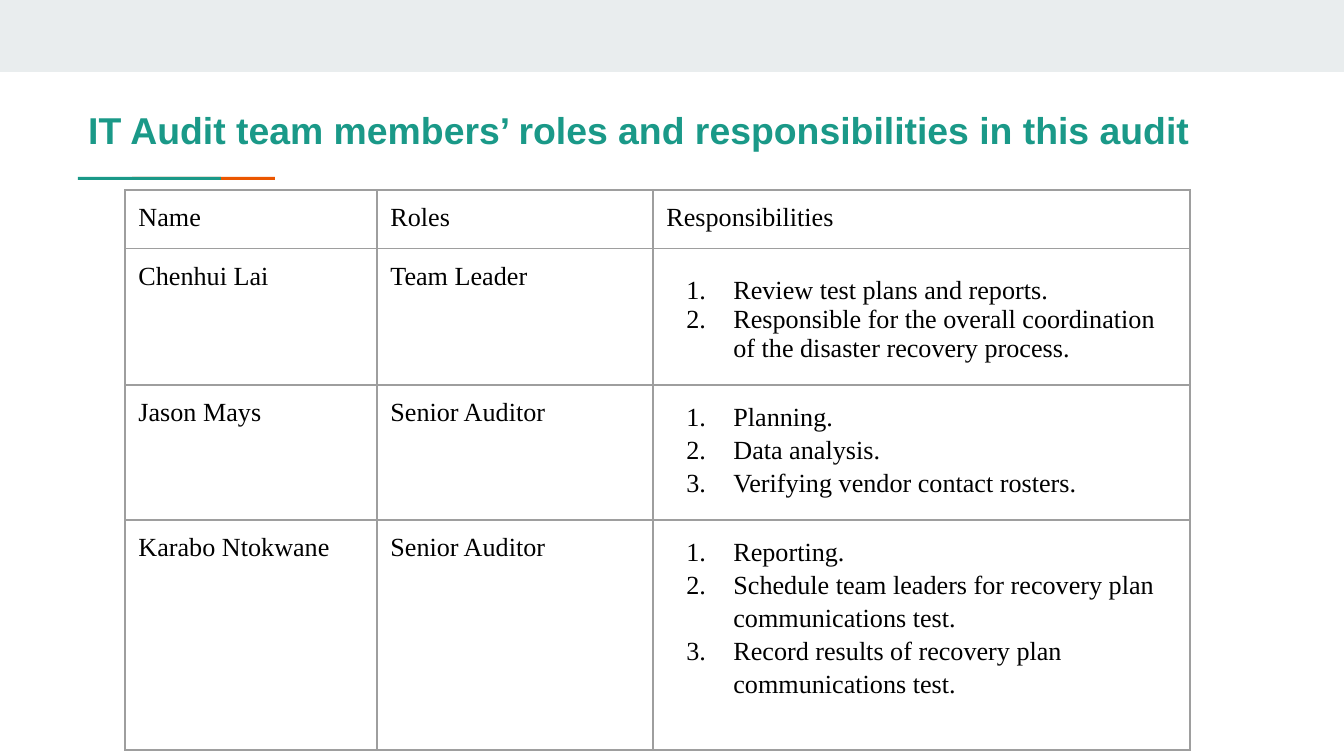
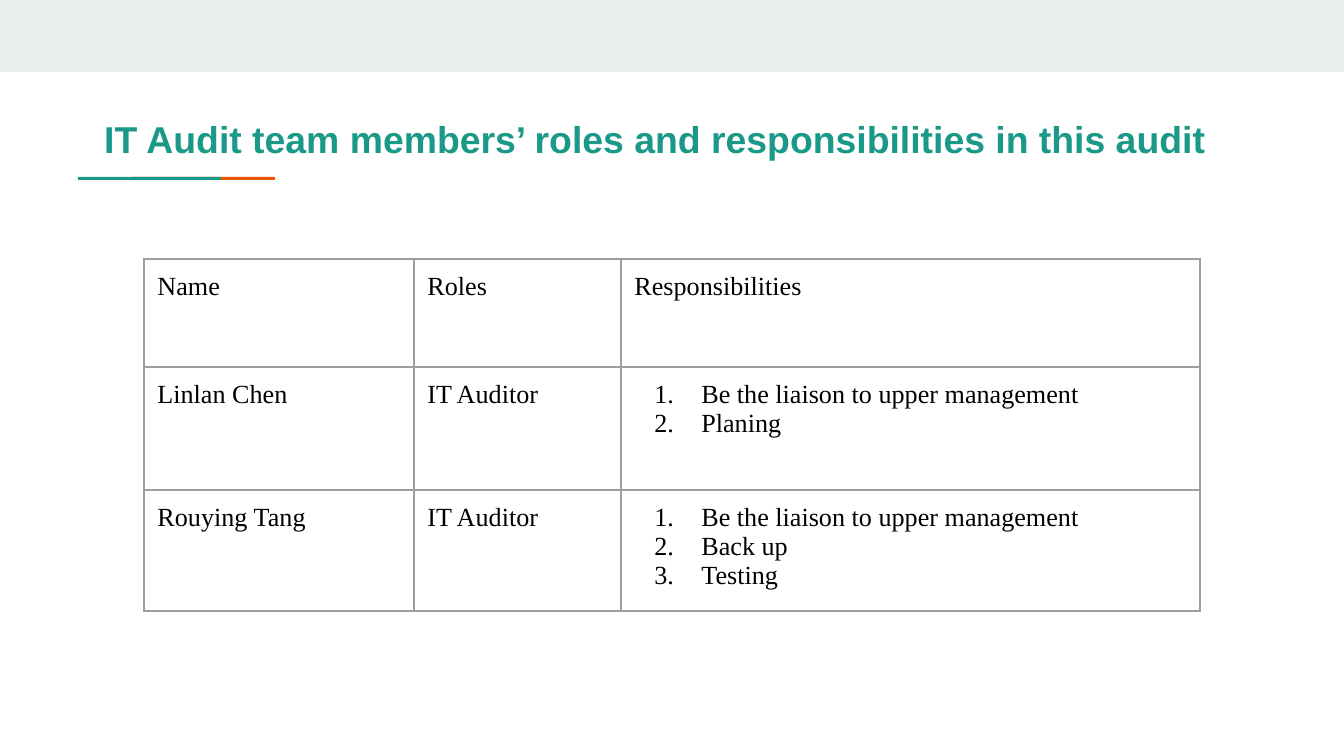
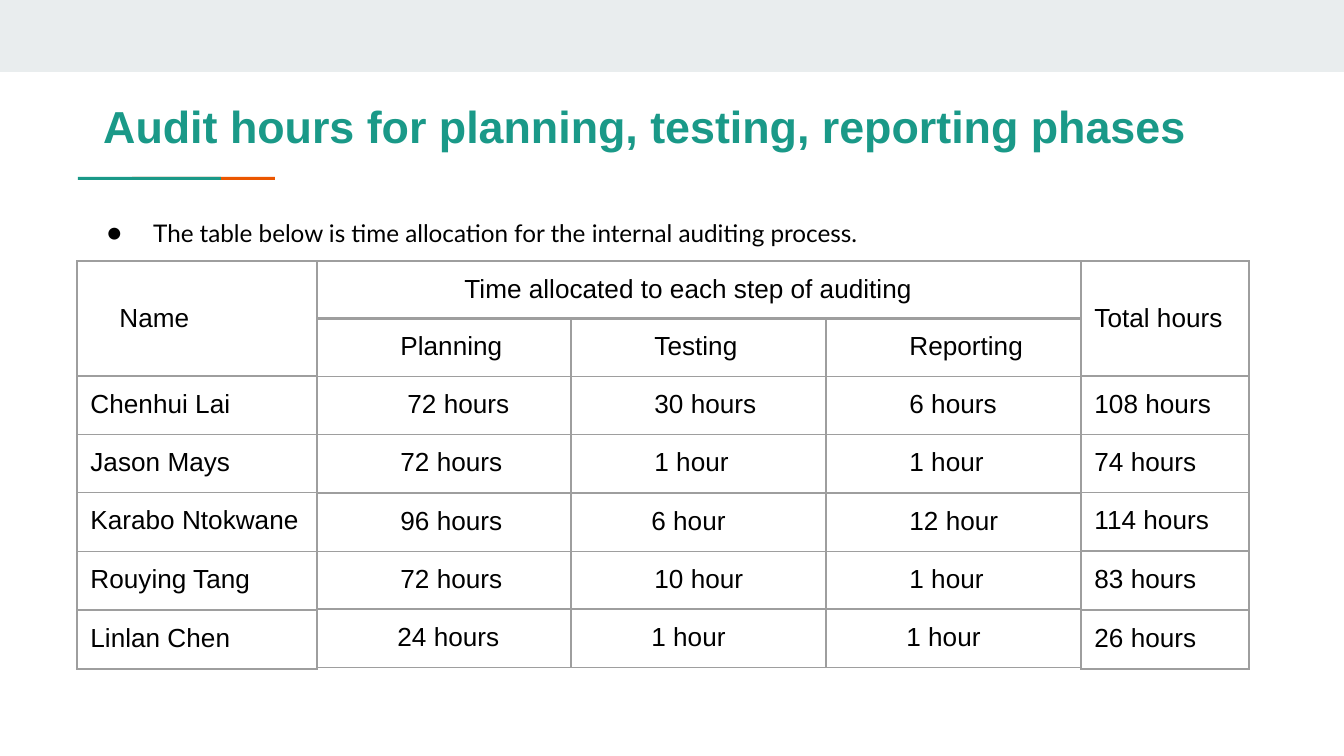
from dataclasses import dataclass

from lxml.etree import SubElement
from pptx import Presentation
from pptx.dml.color import RGBColor
from pptx.enum.shapes import MSO_SHAPE
from pptx.enum.text import MSO_ANCHOR
from pptx.oxml.ns import qn
from pptx.util import Pt

PIXEL = 914400 / 134.4
SLIDE_SIZE = (1344, 756)
MARGINS = dict.fromkeys(("margin_left", "margin_top", "margin_right", "margin_bottom"), Pt(7.2))


@dataclass(frozen=True)
class Theme:
    """Colours, fonts and type sizes of the deck."""

    teal: str = "1A9988"
    orange: str = "EB5600"
    band: str = "E9EDEE"
    border: str = "9E9E9E"
    ink: str = "000000"
    sans: str = "Arial"
    serif: str = "Times New Roman"
    body: str = "Lato"
    small_title: int = 20
    large_title: int = 24
    table_size: int = 14
    body_size: int = 13
    border_width: float = 0.75


@dataclass(frozen=True)
class Line:
    """One paragraph with its indents in px and its bullet."""

    text: str
    left: int = 0
    first: int = 0
    spacing: float = 1.0
    bullet: str = ""


def numbered(*texts, spacing=1.0):
    """Return the texts as numbered lines."""
    return [Line(text, 67, -47, spacing, "1.") for text in texts]


def inset(*texts, left=70):
    """Return a row of cells whose texts are indented."""
    return [[Line(text, left)] for text in texts]


def column(*texts):
    """Return the texts as rows of one cell."""
    return [[text] for text in texts]


THEME = Theme()
HEADINGS = ["Name", "Roles", "Responsibilities"]
TEAM_TITLE = "IT Audit team members’ roles and responsibilities in this audit"
TEAM_TITLE_FORMAT = {"line_spacing": 1.46, "space_before": Pt(13), "space_after": Pt(13)}
BARS = [
    ((0, 0, 1344, 72), THEME.band),
    ((132, 177, 143, 3), THEME.orange),
    ((78, 177, 143, 3), THEME.teal),
]
PHASE_WIDTHS = [254, 255, 255]
NAME_HEIGHTS = [115, 58, 58, 59, 58, 59]
TOTAL_HEIGHTS = [115, 58, 58, 58, 59, 59]

SLIDES = [
    {
        "title": (TEAM_TITLE, (75, 73, 1253, 84), THEME.small_title, TEAM_TITLE_FORMAT),
        "font": THEME.serif,
        "tables": [
            ((125, 190), [252, 276, 537], [56, 128, 133, 230], [
                HEADINGS,
                ["Chenhui Lai", "Team Leader",
                 numbered("Review test plans and reports.", spacing=1.5)
                 + numbered("Responsible for the overall coordination of the disaster recovery process.")],
                ["Jason Mays", "Senior Auditor",
                 numbered("Planning.", "Data analysis.", "Verifying vendor contact rosters.", spacing=1.15)],
                ["Karabo Ntokwane", "Senior Auditor",
                 numbered("Reporting.",
                          "Schedule team leaders for recovery plan communications test.",
                          "Record results of recovery plan communications test.", spacing=1.15)],
            ]),
        ],
    },
    {
        "title": (TEAM_TITLE, (91, 82, 1163, 79), THEME.small_title, TEAM_TITLE_FORMAT),
        "font": THEME.serif,
        "tables": [
            ((144, 259), [270, 207, 579], [108, 123, 114], [
                HEADINGS,
                ["Linlan Chen", "IT Auditor",
                 numbered("Be the liaison to upper management", "Planing")],
                ["Rouying Tang", "IT Auditor",
                 numbered("Be the liaison to upper management", "Back up", "Testing")],
            ]),
        ],
    },
    {
        "title": ("Audit hours for planning, testing, reporting phases",
                  (90, 85, 1130, 79), THEME.large_title, {}),
        "body": (Line("The table below is time allocation for the internal auditing process.",
                      67, -46, 1.15, "●"), (73, 200, 1253, 503)),
        "font": THEME.sans,
        "tables": [
            ((317, 318), PHASE_WIDTHS, [56, 57, 56, 56, 56], [
                inset("Planning", "Testing", "Reporting"),
                inset("72 hours", left=77) + inset("30 hours", "6 hours"),
                inset("72 hours", "1 hour", "1 hour"),
                inset("96 hours") + inset("6 hour", left=67) + inset("12 hour"),
                inset("72 hours", "10 hour", "1 hour"),
            ]),
            ((317, 261), [sum(PHASE_WIDTHS)], [57],
             [inset("Time allocated to each step of auditing", left=134)]),
            ((317, 609), PHASE_WIDTHS, [56], [inset("24 hours", "1 hour", "1 hour", left=67)]),
            ((77, 261), [240], NAME_HEIGHTS,
             [inset("Name", left=29)]
             + column("Chenhui Lai", "Jason Mays", "Karabo Ntokwane", "Rouying Tang", "Linlan Chen")),
            ((1081, 261), [168], TOTAL_HEIGHTS,
             column("Total hours", "108 hours", "74 hours", "114 hours", "83 hours", "26 hours")),
        ],
    },
]


def emu(*pixels):
    """Turn px lengths into EMU."""
    return [round(pixel * PIXEL) for pixel in pixels]


def apply(target, values):
    """Set attributes of an object from a dict."""
    for name, value in values.items():
        setattr(target, name, value)


def write_line(paragraph, line, font, size, color=THEME.ink, bold=False):
    """Write one line with its indents, bullet and font."""
    paragraph.line_spacing = line.spacing
    properties = paragraph._p.get_or_add_pPr()
    left, first = emu(line.left, line.first)
    properties.set("marL", str(left))
    properties.set("indent", str(first))
    if line.bullet:
        bullet_color = SubElement(properties, qn("a:buClr"))
        SubElement(bullet_color, qn("a:srgbClr"), val=THEME.ink)
        SubElement(properties, qn("a:buSzPts"), val=str(size * 100))
        SubElement(properties, qn("a:buFont"), typeface=font)
        if line.bullet == "1.":
            SubElement(properties, qn("a:buAutoNum"), type="arabicPeriod")
        else:
            SubElement(properties, qn("a:buChar"), char=line.bullet)
    run = paragraph.add_run()
    run.text = line.text
    apply(run.font, {"name": font, "size": Pt(size), "bold": bold})
    run.font.color.rgb = RGBColor.from_string(color)
    ending = SubElement(paragraph._p, qn("a:endParaRPr"), sz=str(size * 100))
    SubElement(ending, qn("a:latin"), typeface=font)


def add_bars(slide):
    """Add the top band and the accent line."""
    for box, color in BARS:
        shape = slide.shapes.add_shape(MSO_SHAPE.RECTANGLE, *emu(*box))
        shape.shadow.inherit = False
        shape.fill.solid()
        shape.fill.fore_color.rgb = RGBColor.from_string(color)
        shape.line.fill.background()


def add_text(slide, line, box, font, size, color=THEME.ink, bold=False):
    """Add a wrapped text box and return its paragraph."""
    frame = slide.shapes.add_textbox(*emu(*box)).text_frame
    apply(frame, {"word_wrap": True, **MARGINS})
    write_line(frame.paragraphs[0], line, font, size, color, bold)
    return frame.paragraphs[0]


def format_cell(cell, height):
    """Give a cell its borders, margins and clear fill."""
    properties = cell._tc.get_or_add_tcPr()
    for side in ("lnL", "lnR", "lnT", "lnB"):
        border = SubElement(properties, qn(f"a:{side}"), w=str(Pt(THEME.border_width)))
        fill = SubElement(border, qn("a:solidFill"))
        SubElement(fill, qn("a:srgbClr"), val=THEME.border)
    cell.fill.background()
    apply(cell, MARGINS)
    if height == NAME_HEIGHTS[0]:
        cell.vertical_anchor = MSO_ANCHOR.MIDDLE


def add_grid(slide, corner, widths, heights, rows, font):
    """Add a bordered table of text cells."""
    box = emu(*corner, sum(widths), sum(heights))
    table = slide.shapes.add_table(len(rows), len(widths), *box).table
    apply(table, {"first_row": False, "horz_banding": False})
    for table_column, width in zip(table.columns, emu(*widths)):
        table_column.width = width
    for table_row, height in zip(table.rows, emu(*heights)):
        table_row.height = height
    for row_index, row in enumerate(rows):
        for column_index, content in enumerate(row):
            cell = table.cell(row_index, column_index)
            format_cell(cell, heights[row_index])
            lines = [Line(content)] if isinstance(content, str) else content
            for index, line in enumerate(lines):
                frame = cell.text_frame
                paragraph = frame.add_paragraph() if index else frame.paragraphs[0]
                write_line(paragraph, line, font, THEME.table_size)


def main():
    """Build the deck and save it."""
    presentation = Presentation()
    width, height = emu(*SLIDE_SIZE)
    apply(presentation, {"slide_width": width, "slide_height": height})
    for content in SLIDES:
        slide = presentation.slides.add_slide(presentation.slide_layouts[6])
        add_bars(slide)
        text, box, size, paragraph_format = content["title"]
        title = add_text(slide, Line(text), box, THEME.sans, size, THEME.teal, True)
        apply(title, paragraph_format)
        if "body" in content:
            add_text(slide, *content["body"], THEME.body, THEME.body_size)
        for table in content["tables"]:
            add_grid(slide, *table, content["font"])
    presentation.save("out.pptx")


if __name__ == "__main__":
    main()
